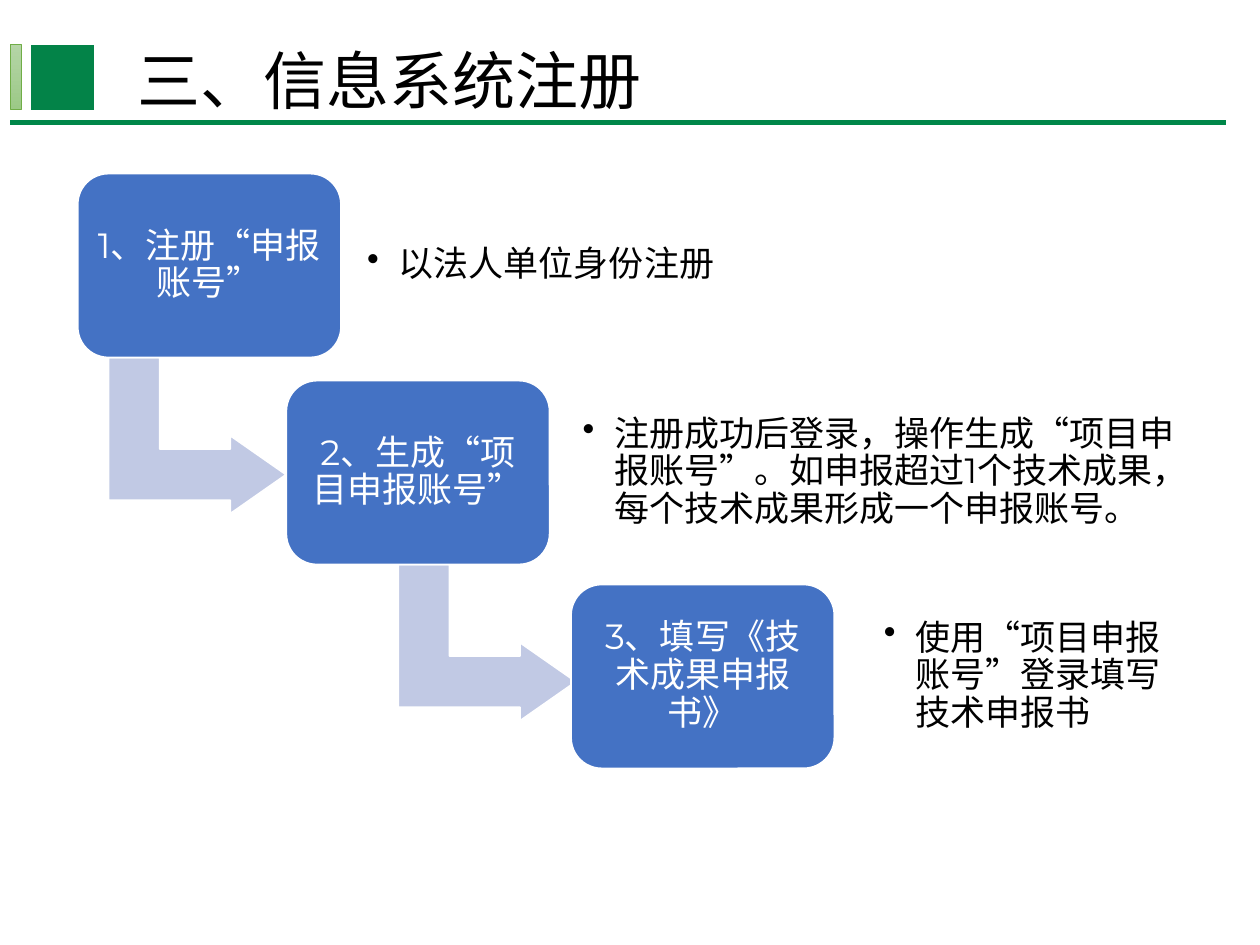
import pptx
import pptx.util
import pptx.dml.color
import pptx.enum.lang
import pptx.enum.shapes
import pptx.enum.text
import pptx.oxml.ns
import lxml.etree

Pt = pptx.util.Pt
SHAPE = pptx.enum.shapes.MSO_SHAPE
ALIGN = pptx.enum.text.PP_ALIGN
ANCHOR = pptx.enum.text.MSO_ANCHOR

TITLE = "三、信息系统注册"
# Positions in points; "arrow" is the left edge of the arrow to the next step.
STEPS = [
    {"label": "1、注册“申报账号”", "left": 44.4, "top": 99.2,
     "note": "以法人单位身份注册", "note_left": 203.8, "note_width": 279.4, "arrow": 62},
    {"label": "2、生成“项目申报账号”", "left": 163.6, "top": 217.5,
     "note": "注册成功后登录，操作生成“项目申报账号”。如申报超过1个技术成果，每个技术成果形成一个申报账号。",
     "note_left": 326.9, "note_width": 362.2, "arrow": 227.6},
    {"label": "3、填写《技术成果申报书》", "left": 326.3, "top": 334,
     "note": "使用“项目申报账号”登录填写技术申报书",
     "note_left": 499, "note_width": 190, "arrow": None},
]
BOX_WIDTH, BOX_HEIGHT, NOTE_HEIGHT = 150.5, 105.1, 85
ARROW_LENGTH, ARROW_HEIGHT, ARROW_DROP = 101.5, 89.3, 105.1
INSET, INDENT = 6, 18

THEME = {
    "font": "Montserrat", "title_size": 36, "body_size": 20,
    "text": "000000", "white": "FFFFFF", "box": "4472C4", "arrow": "C1C9E4",
    "rule": "008749", "square": "038348",
    "bar_line": "70AD47", "bar_top": "B5D5A7", "bar_bottom": "9CC987",
}


def color(name):
    return pptx.dml.color.RGBColor.from_string(THEME[name])


def add_shape(page, kind, left, top, width, height, fill, line, line_width):
    shape = page.shapes.add_shape(kind, Pt(left), Pt(top), Pt(width), Pt(height))
    shape.shadow.inherit = False
    shape.fill.solid()
    shape.fill.fore_color.rgb = color(fill)
    shape.line.color.rgb = color(line)
    shape.line.width = Pt(line_width)
    return shape


def write(shape, text, size, ink, inset, anchor, align=ALIGN.LEFT, bullet=False):
    frame = shape.text_frame
    frame.word_wrap = True
    frame.vertical_anchor = anchor
    frame.margin_left = frame.margin_right = Pt(inset[0])
    frame.margin_top = frame.margin_bottom = Pt(inset[1])
    frame.text = text
    para = frame.paragraphs[0]
    para.alignment = align
    para.line_spacing = 0.9
    if bullet:
        properties = para._p.get_or_add_pPr()
        properties.set("marL", str(Pt(INDENT)))
        properties.set("indent", str(-Pt(INDENT)))
        mark = lxml.etree.SubElement(properties, pptx.oxml.ns.qn("a:buChar"))
        mark.set("char", "•")
    span = para.runs[0]
    span.font.size = Pt(size)
    span.font.name = THEME["font"]
    span.font.color.rgb = color(ink)
    span.font.language_id = pptx.enum.lang.MSO_LANGUAGE_ID.SIMPLIFIED_CHINESE


def add_header(page):
    rule = page.shapes.add_connector(
        pptx.enum.shapes.MSO_CONNECTOR.STRAIGHT, Pt(5.8), Pt(70), Pt(700.6), Pt(70))
    rule.line.color.rgb = color("rule")
    rule.line.width = Pt(3)
    lxml.etree.SubElement(rule._element.spPr, pptx.oxml.ns.qn("a:effectLst"))

    add_shape(page, SHAPE.RECTANGLE, 17, 25.2, 37.4, 38.5, "square", "white", 1.5)
    bar = add_shape(page, SHAPE.RECTANGLE, 5.8, 25.2, 6.5, 37.4, "bar_top", "bar_line", 0.5)
    bar.fill.gradient()
    bar.fill.gradient_angle = 270
    for stop, name in zip(bar.fill.gradient_stops, ("bar_top", "bar_bottom")):
        stop.color.rgb = color(name)

    title = page.shapes.add_textbox(Pt(71.3), Pt(25.2), Pt(620.6), Pt(31))
    write(title, TITLE, THEME["title_size"], "text", (7.2, 3.6), ANCHOR.TOP)


def add_step(page, step):
    if step["arrow"] is not None:
        # The frame is given before its quarter turn, around the same centre.
        shift = (ARROW_LENGTH - ARROW_HEIGHT) / 2
        arrow = add_shape(page, SHAPE.BENT_UP_ARROW, step["arrow"] + shift,
                          step["top"] + ARROW_DROP - shift,
                          ARROW_HEIGHT, ARROW_LENGTH, "arrow", "white", 1)
        arrow.rotation = 90
        for index, value in enumerate((0.328, 0.25, 0.358)):
            arrow.adjustments[index] = value

    box = add_shape(page, SHAPE.ROUNDED_RECTANGLE, step["left"], step["top"],
                    BOX_WIDTH, BOX_HEIGHT, "box", "white", 1)
    write(box, step["label"], THEME["body_size"], "white", (INSET, INSET),
          ANCHOR.MIDDLE, ALIGN.CENTER)

    note_top = step["top"] + (BOX_HEIGHT - NOTE_HEIGHT) / 2
    note = page.shapes.add_textbox(Pt(step["note_left"]), Pt(note_top),
                                   Pt(step["note_width"]), Pt(NOTE_HEIGHT))
    write(note, step["note"], THEME["body_size"], "text", (INSET, INSET),
          ANCHOR.MIDDLE, bullet=True)


def main():
    deck = pptx.Presentation()
    deck.slide_width, deck.slide_height = Pt(720), Pt(540)
    page = deck.slides.add_slide(deck.slide_layouts[6])
    add_header(page)
    for step in STEPS:
        add_step(page, step)
    deck.save("out.pptx")


if __name__ == "__main__":
    main()
